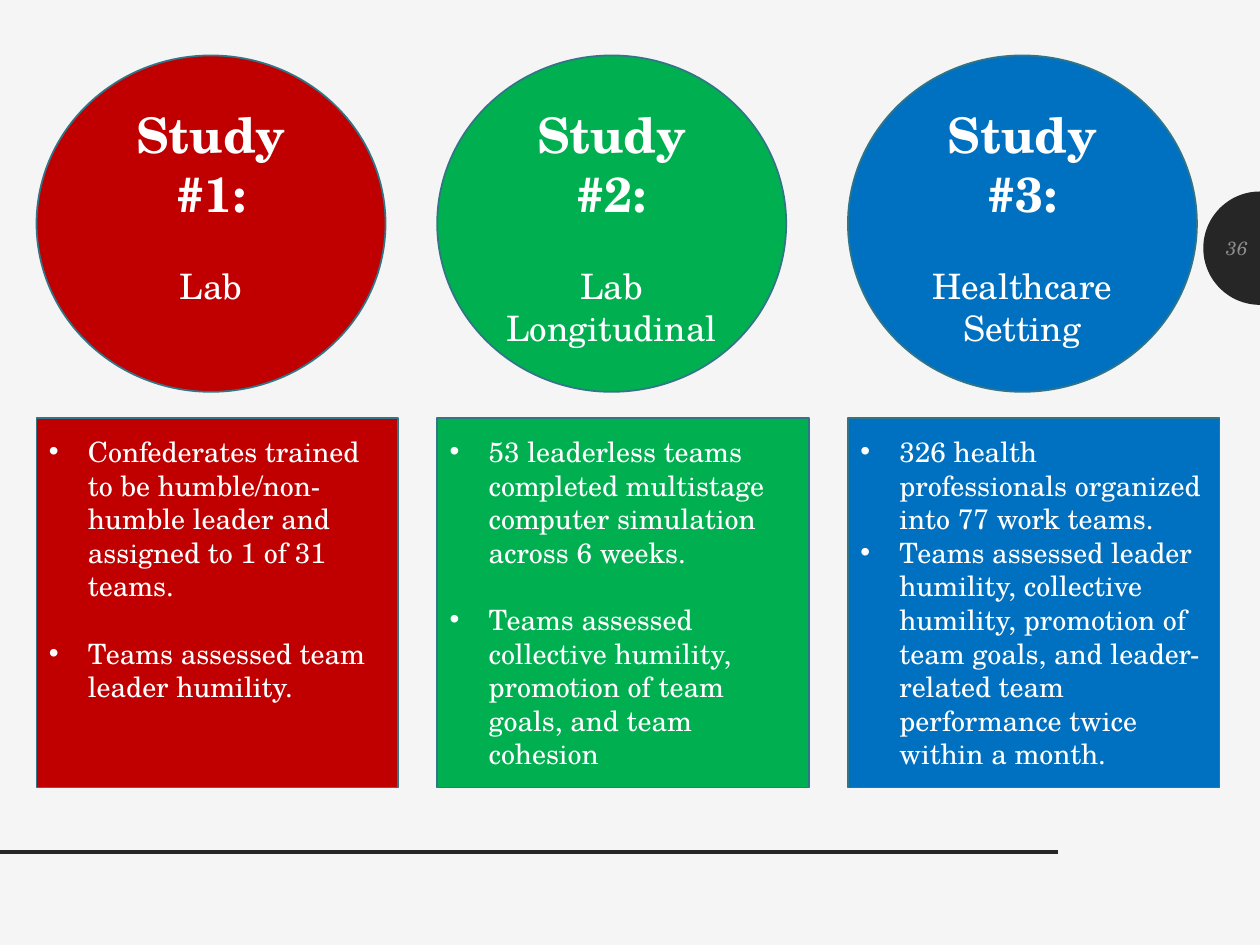
import math
import pptx
import pptx.util
import pptx.dml.color
import pptx.enum.shapes
import pptx.enum.text
from lxml import etree
from pptx.oxml.ns import qn

Inches, Pt = pptx.util.Inches, pptx.util.Pt
RGBColor = pptx.dml.color.RGBColor
SHAPE = pptx.enum.shapes.MSO_SHAPE
ALIGN = pptx.enum.text.PP_ALIGN
ANCHOR = pptx.enum.text.MSO_ANCHOR

PAPER = RGBColor(0xF5, 0xF5, 0xF5)
DARK = RGBColor(0x26, 0x26, 0x26)
GRAY = RGBColor(0x8C, 0x8C, 0x8C)
WHITE = RGBColor(0xFF, 0xFF, 0xFF)
TEAL = RGBColor(0x32, 0x75, 0x87)
RED = RGBColor(0xC0, 0x00, 0x00)
GREEN = RGBColor(0x00, 0xB0, 0x50)
BLUE = RGBColor(0x00, 0x70, 0xC0)


class Deck:
    face = "TeX Gyre Schola"

    def __init__(self, slide):
        self.slide = slide
        self.shapes = slide.shapes

    def style(self, para, size, color=WHITE, bold=False, italic=False):
        font = para.font
        font.name, font.size = self.face, Pt(size)
        font.bold, font.italic = bold, italic
        font.color.rgb = color

    def shape(self, kind, left, top, width, height, fill, inset):
        shape = self.shapes.add_shape(
            kind, Inches(left), Inches(top), Inches(width), Inches(height))
        shape.shadow.inherit = False
        shape.fill.solid()
        shape.fill.fore_color.rgb = fill
        shape.line.color.rgb = TEAL
        shape.line.width = Pt(1)
        frame = shape.text_frame
        frame.word_wrap = True
        frame.vertical_anchor = ANCHOR.TOP
        frame.margin_top = Inches(inset)
        return frame

    def circle(self, left, fill, title, lines):
        frame = self.shape(SHAPE.OVAL, left, 0.44, 2.77, 2.67, fill, 0)
        frame.text = "\n".join([title] + lines)
        for i, para in enumerate(frame.paragraphs):
            para.alignment = ALIGN.CENTER
            self.style(para, 20 if i else 28, bold=i == 0)
        frame.paragraphs[1].space_before = Pt(24)

    def box(self, left, width, fill, items, gap):
        frame = self.shape(SHAPE.RECTANGLE, left, 3.32, width, 2.93, fill, 0.13)
        frame.text = "\n".join(items)
        for i, para in enumerate(frame.paragraphs):
            para.alignment = ALIGN.LEFT
            para.space_before = Pt(gap if i else 0)
            props = para._p.get_or_add_pPr()
            props.set("marL", str(Inches(0.31)))
            props.set("indent", str(-Inches(0.31)))
            etree.SubElement(props, qn("a:buFont")).set("typeface", "Arial")
            etree.SubElement(props, qn("a:buChar")).set("char", "•")
            self.style(para, 16)

    def rule(self, start, end, y):
        line = self.shapes.add_connector(
            pptx.enum.shapes.MSO_CONNECTOR.STRAIGHT,
            Inches(start), Inches(y), Inches(end), Inches(y))
        line.line.color.rgb = DARK
        line.line.width = Pt(2)
        etree.SubElement(line._element.spPr, qn("a:effectLst"))

    def tab(self, x, y, radius, steps=52):
        turns = [math.pi * (0.5 + i / steps) for i in range(steps + 1)]
        points = [(Inches(x + radius * math.cos(t)),
                   Inches(y + radius * math.sin(t))) for t in turns]
        pen = self.shapes.build_freeform(*points[0])
        pen.add_line_segments(points[1:], close=True)
        shape = pen.convert_to_shape()
        shape.shadow.inherit = False
        shape.fill.solid()
        shape.fill.fore_color.rgb = DARK
        shape.line.fill.background()

    def number(self, text):
        frame = self.shapes.add_textbox(
            Inches(9.55), Inches(1.77), Inches(0.45), Inches(0.4)).text_frame
        frame.word_wrap = True
        frame.vertical_anchor = ANCHOR.MIDDLE
        frame.text = text
        para = frame.paragraphs[0]
        para.alignment = ALIGN.RIGHT
        self.style(para, 11, GRAY, italic=True)


# Left, box width, color, title, setting, findings, gap between findings
STUDIES = [
    (0.29, 2.87, RED, "Study #1:", ["Lab"],
     ["Confederates trained to be humble/non-humble leader and assigned "
      "to 1 of 31 teams.",
      "Teams assessed team leader humility."], 19.2),
    (3.47, 2.95, GREEN, "Study #2:", ["Lab", "Longitudinal"],
     ["53 leaderless teams completed multistage computer simulation "
      "across 6 weeks.",
      "Teams assessed collective humility, promotion of team goals, "
      "and team cohesion"], 19.2),
    (6.73, 2.95, BLUE, "Study #3:", ["Healthcare Setting"],
     ["326 health professionals organized into 77 work teams.",
      "Teams assessed leader humility, collective humility, promotion of "
      "team goals, and leader-related team performance twice within a "
      "month."], 0),
]


def main():
    prs = pptx.Presentation()
    prs.slide_width, prs.slide_height = Inches(10), Inches(7.5)
    slide = prs.slides.add_slide(prs.slide_layouts[6])
    slide.background.fill.solid()
    slide.background.fill.fore_color.rgb = PAPER
    deck = Deck(slide)

    # Page frame
    deck.tab(10, 1.97, 0.45)
    deck.rule(8.4, 0, 6.76)

    # Study columns
    for left, width, color, title, lines, items, gap in STUDIES:
        deck.box(left, width, color, items, gap)
        deck.circle(left, color, title, lines)

    # Page number
    deck.number("36")
    prs.save("out.pptx")


if __name__ == "__main__":
    main()
